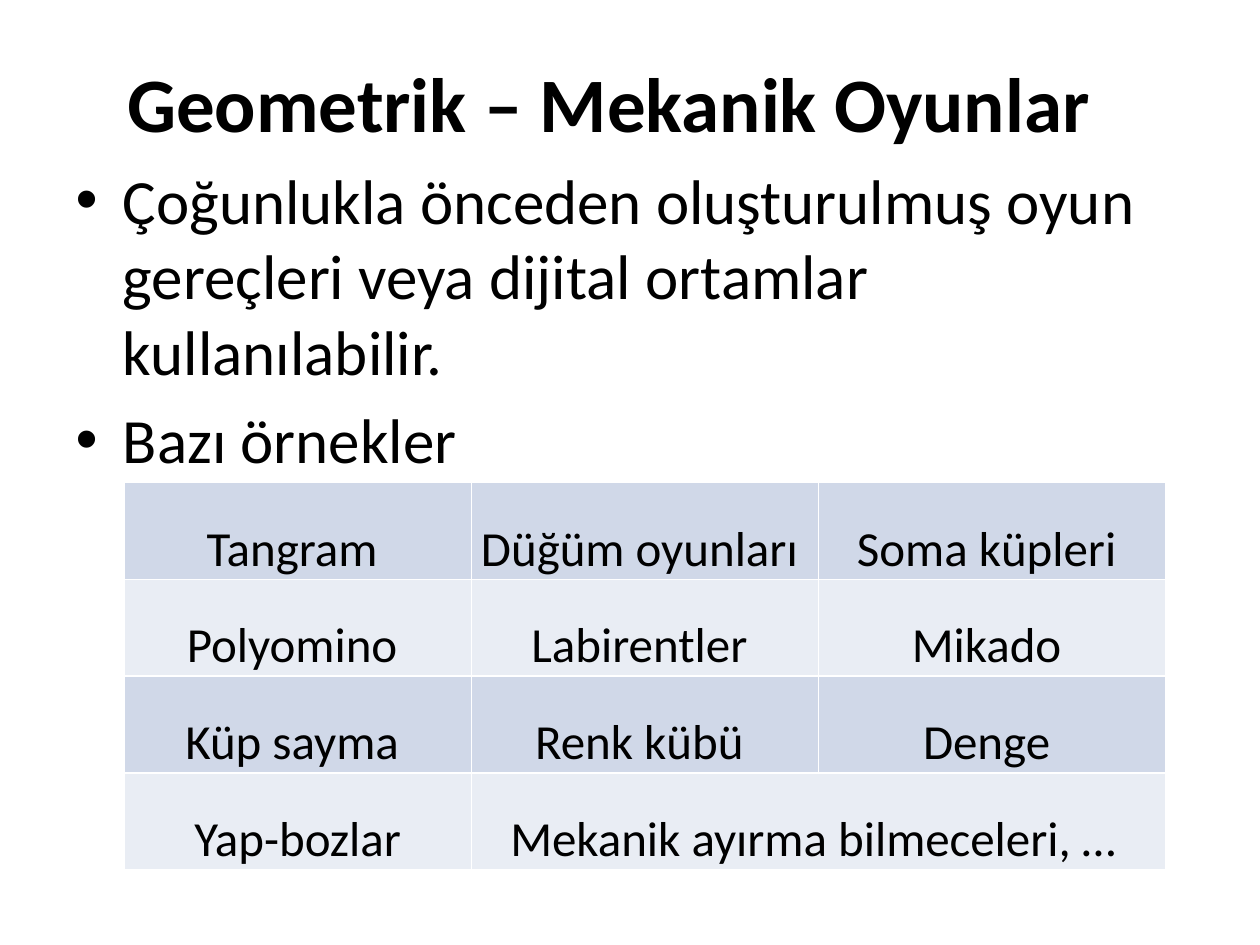
import lxml.etree
import pptx
import pptx.dml.color
import pptx.enum.text
import pptx.oxml.ns
import pptx.util

Cm = pptx.util.Cm
Pt = pptx.util.Pt
RGBColor = pptx.dml.color.RGBColor
ALIGN = pptx.enum.text.PP_ALIGN
ANCHOR = pptx.enum.text.MSO_ANCHOR
qn = pptx.oxml.ns.qn

BLACK = RGBColor(0x00, 0x00, 0x00)
WHITE = RGBColor(0xFF, 0xFF, 0xFF)
BANDS = (RGBColor(0xD0, 0xD8, 0xE8), RGBColor(0xE9, 0xED, 0xF4))

TITLE = "Geometrik – Mekanik Oyunlar"
ITEMS = [
    "Çoğunlukla önceden oluşturulmuş oyun gereçleri veya dijital ortamlar kullanılabilir.",
    "Bazı örnekler",
]
GAMES = [
    ["Tangram ", "Düğüm oyunları ", "Soma küpleri "],
    ["Polyomino ", "Labirentler ", "Mikado "],
    ["Küp sayma ", "Renk kübü ", "Denge "],
    ["Yap-bozlar", "Mekanik ayırma bilmeceleri, … "],
]


class Page:
    font = "Calibri"
    ink = BLACK

    def __init__(self, deck):
        self.slide = deck.slides.add_slide(deck.slide_layouts[1])

    def words(self, para, text, size, bold=None):
        run = para.add_run()
        run.text = text
        run.font.name = self.font
        run.font.size = Pt(size)
        run.font.bold = bold
        run.font.color.rgb = self.ink

    def place(self, shape, left, top, width, height):
        shape.left, shape.top = Cm(left), Cm(top)
        shape.width, shape.height = Cm(width), Cm(height)
        shape.text_frame.auto_size = pptx.enum.text.MSO_AUTO_SIZE.NONE
        return shape.text_frame

    def title(self, text, *box):
        frame = self.place(self.slide.shapes.title, *box)
        frame.vertical_anchor = ANCHOR.MIDDLE
        para = frame.paragraphs[0]
        para.alignment = ALIGN.CENTER
        self.words(para, text, 44, True)

    def bullets(self, items, *box):
        frame = self.place(self.slide.placeholders[1], *box)
        for index, text in enumerate(items):
            para = frame.add_paragraph() if index else frame.paragraphs[0]
            self.words(para, text, 36)

    def border(self, cell):
        props = cell._tc.get_or_add_tcPr()
        for side in ("lnL", "lnR", "lnT", "lnB"):
            line = lxml.etree.SubElement(props, qn("a:" + side), w=str(Pt(1)))
            fill = lxml.etree.SubElement(line, qn("a:solidFill"))
            lxml.etree.SubElement(fill, qn("a:srgbClr"), val=str(WHITE))

    def cell(self, cell, text, fill):
        self.border(cell)
        cell.fill.solid()
        cell.fill.fore_color.rgb = fill
        cell.vertical_anchor = ANCHOR.BOTTOM
        cell.margin_left = cell.margin_right = cell.margin_top = Cm(0.03)
        cell.margin_bottom = 0
        if text:
            para = cell.text_frame.paragraphs[0]
            para.alignment = ALIGN.CENTER
            self.words(para, text, 28)

    def table(self, rows, left, top, width, height):
        cols = len(rows[0])
        grid = self.slide.shapes.add_table(
            len(rows), cols, Cm(left), Cm(top), Cm(width), Cm(height)
        ).table
        grid.first_row = grid.horz_banding = False
        for r, texts in enumerate(rows):
            if len(texts) < cols:
                grid.cell(r, len(texts) - 1).merge(grid.cell(r, cols - 1))
            for c in range(cols):
                text = texts[c] if c < len(texts) else ""
                self.cell(grid.cell(r, c), text, BANDS[r % 2])


def main():
    deck = pptx.Presentation()
    deck.slide_width, deck.slide_height = Cm(25.4), Cm(19.05)
    page = Page(deck)
    page.title(TITLE, 1.27, 0.76, 22.02, 2.57)
    page.bullets(ITEMS, 1.27, 3.12, 22.63, 14.6)
    page.table(GAMES, 2.5, 9.73, 21, 7.8)
    deck.save("out.pptx")


if __name__ == "__main__":
    main()
